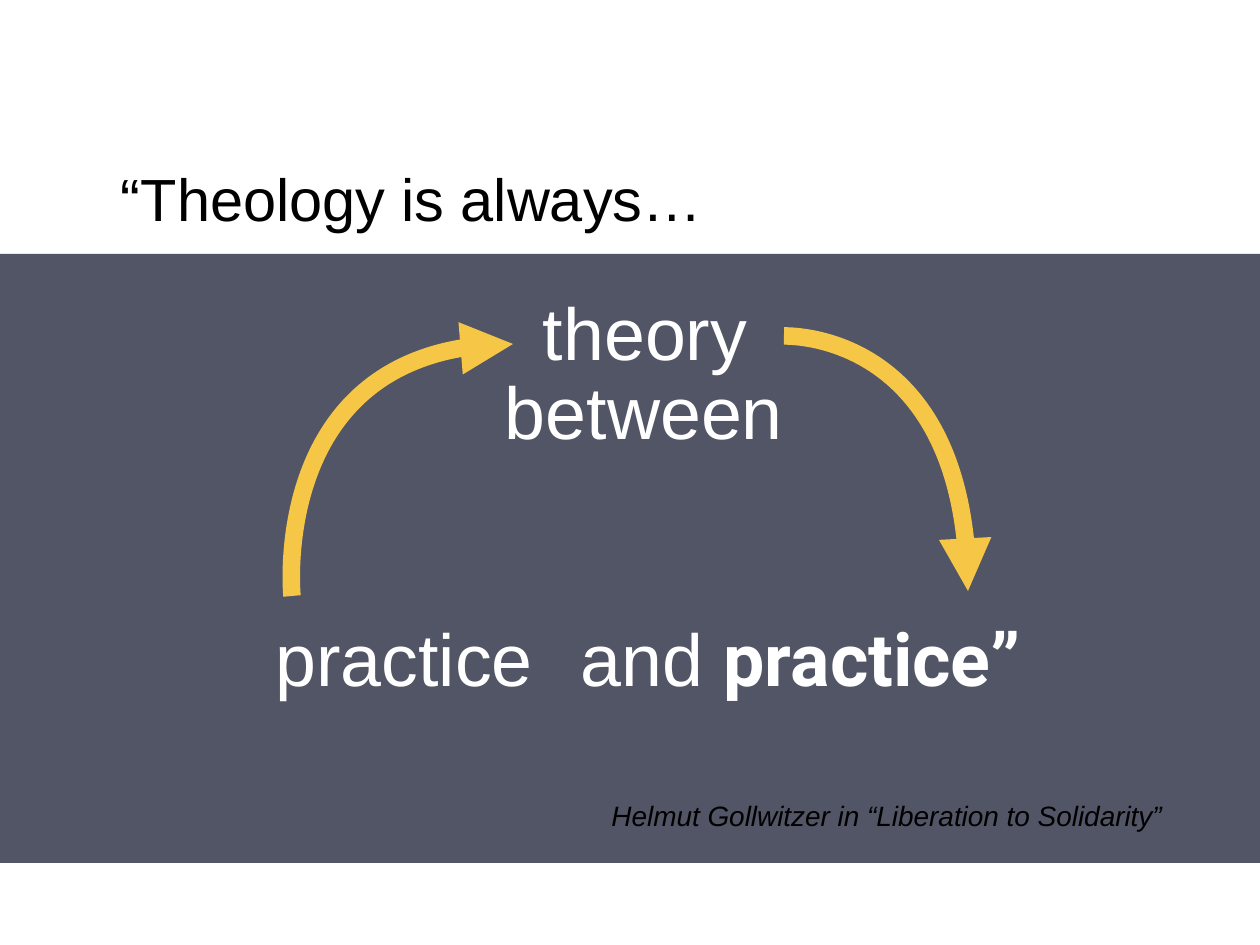
from lxml import etree
from pptx import Presentation
from pptx import util as u
from pptx.dml.color import RGBColor
from pptx.enum import shapes, text
from pptx.oxml.ns import qn

EMU_PER_PX = u.Inches(1) / 126
BLACK = RGBColor(0x00, 0x00, 0x00)
WHITE = RGBColor(0xFF, 0xFF, 0xFF)
SLATE = RGBColor(0x52, 0x55, 0x65)
YELLOW = RGBColor(0xF6, 0xC6, 0x46)


def px(length):
    return u.Emu(round(length * EMU_PER_PX))


def write(paragraph, content, size=42, font="Arial", color=WHITE, bold=False, italic=False):
    run = paragraph.add_run()
    run.text = content
    run.font.size = u.Pt(size)
    run.font.name = font
    run.font.color.rgb = color
    run.font.bold = bold
    run.font.italic = italic


class CycleSlide:
    """Holds the slide and the style shared by its labels and arrows."""

    inset = 6
    arrow_width = 10

    def __init__(self, presentation):
        self.slide = presentation.slides.add_slide(presentation.slide_layouts[5])

    def set_frame(self, shape, auto_size):
        frame = shape.text_frame
        frame.word_wrap = True
        frame.auto_size = auto_size
        frame.margin_left = frame.margin_right = px(self.inset)
        frame.margin_top = frame.margin_bottom = px(self.inset)
        return frame

    def title(self, content, left, top, width, height):
        shape = self.slide.shapes.title
        shape.left, shape.top, shape.width, shape.height = map(px, (left, top, width, height))
        frame = self.set_frame(shape, text.MSO_AUTO_SIZE.NONE)
        frame.vertical_anchor = text.MSO_ANCHOR.MIDDLE
        paragraph = frame.paragraphs[0]
        paragraph.alignment = text.PP_ALIGN.LEFT
        write(paragraph, content, size=34, color=BLACK)

    def band(self, left, top, width, height):
        """Add the plain panel behind the title and everything else."""
        shape = self.slide.shapes.add_shape(
            shapes.MSO_SHAPE.RECTANGLE, *map(px, (left, top, width, height)))
        shape.shadow.inherit = False
        shape.fill.solid()
        shape.fill.fore_color.rgb = SLATE
        shape.line.fill.background()
        self.slide.shapes.title.element.addprevious(shape.element)

    def label(self, left, top, width, height, space_before=11):
        """Add a centred text box and return its paragraph."""
        shape = self.slide.shapes.add_textbox(*map(px, (left, top, width, height)))
        frame = self.set_frame(shape, text.MSO_AUTO_SIZE.SHAPE_TO_FIT_TEXT)
        paragraph = frame.paragraphs[0]
        paragraph.alignment = text.PP_ALIGN.CENTER
        paragraph.space_before = u.Pt(space_before)
        return paragraph

    def curved_arrow(self, start, control_1, control_2, end):
        """Add a cubic curve with an arrowhead at its end."""
        builder = self.slide.shapes.build_freeform(*start, scale=EMU_PER_PX)
        builder.add_line_segments([end], close=False)
        shape = builder.convert_to_shape()
        shape.shadow.inherit = False
        shape.fill.background()
        shape.line.color.rgb = YELLOW
        shape.line.width = u.Pt(self.arrow_width)

        segment = next(shape.element.iter(qn("a:lnTo")))
        segment.tag = qn("a:cubicBezTo")
        corner = min(start[0], end[0]), min(start[1], end[1])
        scale_x = int(segment.getparent().get("w")) / abs(end[0] - start[0])
        scale_y = int(segment.getparent().get("h")) / abs(end[1] - start[1])
        for index, (x, y) in enumerate((control_1, control_2)):
            point = etree.Element(qn("a:pt"))
            point.set("x", str(round((x - corner[0]) * scale_x)))
            point.set("y", str(round((y - corner[1]) * scale_y)))
            segment.insert(index, point)
        etree.SubElement(shape.line._get_or_add_ln(), qn("a:tailEnd"), type="triangle")


def main():
    presentation = Presentation()
    presentation.slide_width, presentation.slide_height = px(1260), px(945)
    cycle = CycleSlide(presentation)

    cycle.title("“Theology is always…", 115, 135, 719, 126)
    cycle.band(-20, 254, 1302, 609)

    write(cycle.label(473, 281, 344, 106), "theory")
    write(cycle.label(552, 793, 670, 48, space_before=9),
          "Helmut Gollwitzer in “Liberation to Solidarity”", size=16, color=BLACK, italic=True)
    write(cycle.label(232, 607, 344, 106), "practice")
    conclusion = cycle.label(508, 607, 585, 106)
    write(conclusion, "and ")
    write(conclusion, "practice”", font="Roboto", bold=True)
    write(cycle.label(379, 360, 530, 106), "between")

    cycle.curved_arrow((292, 596), (292, 596), (267, 344), (513, 344))
    cycle.curved_arrow((784, 336), (820, 336), (968, 358), (968, 591))

    presentation.save("out.pptx")


if __name__ == "__main__":
    main()
